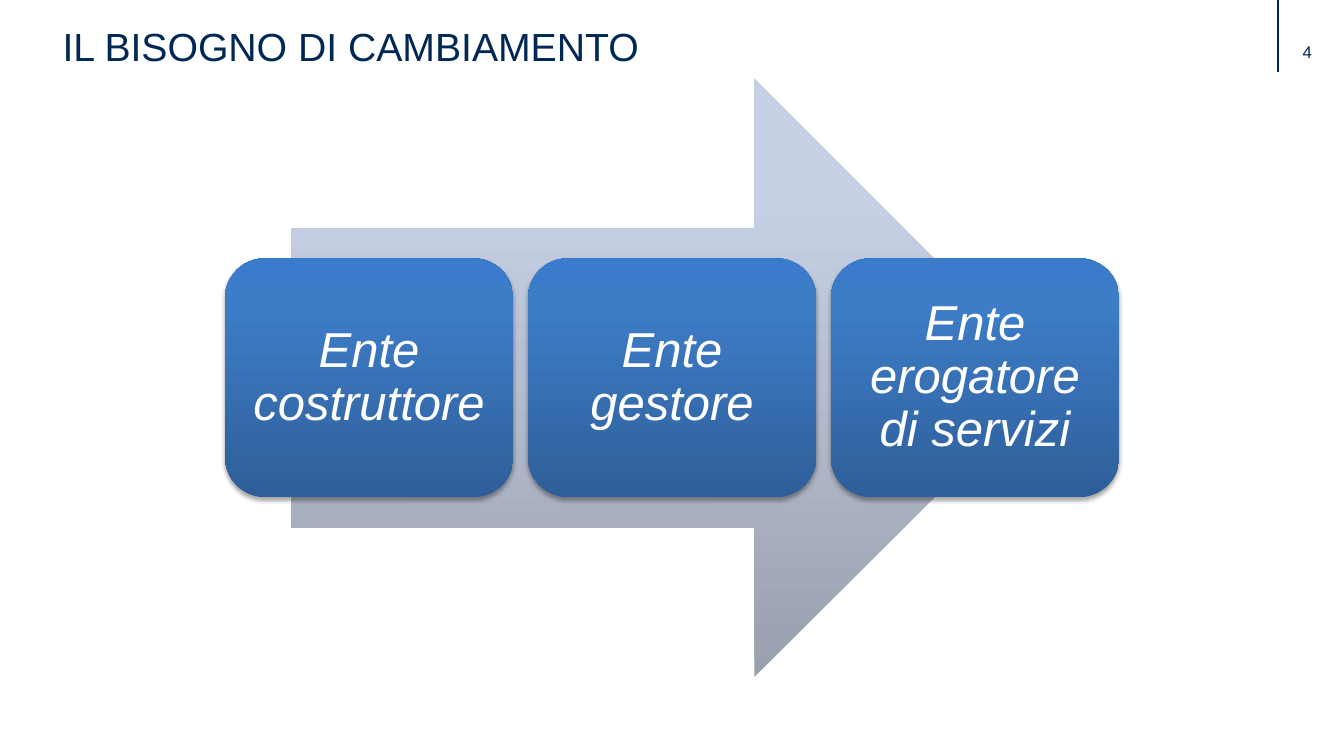
"""Build the slide with three stages laid over a broad arrow."""
from pptx import Presentation, dml, util as u
from pptx.dml import color as c
from pptx.enum import shapes as s, text as t
from pptx.oxml import parse_xml
from pptx.util import Pt

NS = 'xmlns:a="http://schemas.openxmlformats.org/drawingml/2006/main"'
NAVY = "002855"


def hue(code):
    return c.RGBColor.from_string(code)


def block(kind, left, top, width, height, stops):
    shape = slide.shapes.add_shape(kind, Pt(left), Pt(top), Pt(width), Pt(height))
    shape.shadow.inherit = False
    shape.line.fill.background()
    marks = "".join(
        f'<a:gs pos="{pos}"><a:srgbClr val="{code}"/></a:gs>'
        for pos, code in zip((0, 80000, 100000), stops))
    fill = parse_xml(f'<a:gradFill {NS} rotWithShape="1"><a:gsLst>{marks}</a:gsLst>'
                     '<a:lin ang="16200000" scaled="0"/></a:gradFill>')
    shape._element.spPr.insert(2, fill)
    return shape


deck = Presentation()
deck.slide_width, deck.slide_height = Pt(960), Pt(540)
slide = deck.slides.add_slide(deck.slide_layouts[6])

labels = [
    ("4", 930.5, 29.5, 29.5, 29, 12, 0, 0),
    ("IL BISOGNO DI CAMBIAMENTO", 37.6, 12.4, 720, 54, 28, 7.2, 3.6),
]
for words, left, top, width, height, size, side, edge in labels:
    frame = slide.shapes.add_textbox(
        Pt(left), Pt(top), Pt(width), Pt(height)).text_frame
    frame.word_wrap = True
    frame.margin_left = frame.margin_right = Pt(side)
    frame.margin_top = frame.margin_bottom = Pt(edge)
    para = frame.paragraphs[0]
    para.text = words
    para.font.name, para.font.size = "Arial", Pt(size)
    para.font.color.rgb = hue(NAVY)

rule = slide.shapes.add_connector(
    s.MSO_CONNECTOR.STRAIGHT, Pt(913), Pt(0), Pt(913), Pt(51.6))
rule.line.color.rgb = hue(NAVY)
rule.line.width = Pt(1)
rule._element.spPr.append(parse_xml(f"<a:effectLst {NS}/>"))

block(s.MSO_SHAPE.RIGHT_ARROW, 208, 56.6, 544.4, 427,
      ("99A0AF", "C6D0E4", "C7D1E5"))

stages = ["Ente costruttore", "Ente gestore", "Ente erogatore di servizi"]
for i, words in enumerate(stages):
    card = block(s.MSO_SHAPE.ROUNDED_RECTANGLE, 160.7 + i * 216.4, 184.6, 206, 170.6,
                 ("2F5F99", "3D7CC7", "3A7CCB"))
    glow = parse_xml(
        f'<a:outerShdw {NS} blurRad="{Pt(3.1)}" dist="{Pt(1.8)}" dir="5400000" '
        'rotWithShape="0"><a:srgbClr val="000000"><a:alpha val="35000"/>'
        '</a:srgbClr></a:outerShdw>')
    card._element.spPr[-1].append(glow)
    frame = card.text_frame
    frame.word_wrap = True
    frame.vertical_anchor = t.MSO_ANCHOR.MIDDLE
    frame.margin_left = frame.margin_right = Pt(10)
    frame.margin_top = frame.margin_bottom = Pt(10)
    para = frame.paragraphs[0]
    para.text = words
    para.alignment = t.PP_ALIGN.CENTER
    para.line_spacing = 0.9
    para.font.name, para.font.size, para.font.italic = "Arial", Pt(35), True
    para.font.color.rgb = hue("FFFFFF")

deck.save("out.pptx")
